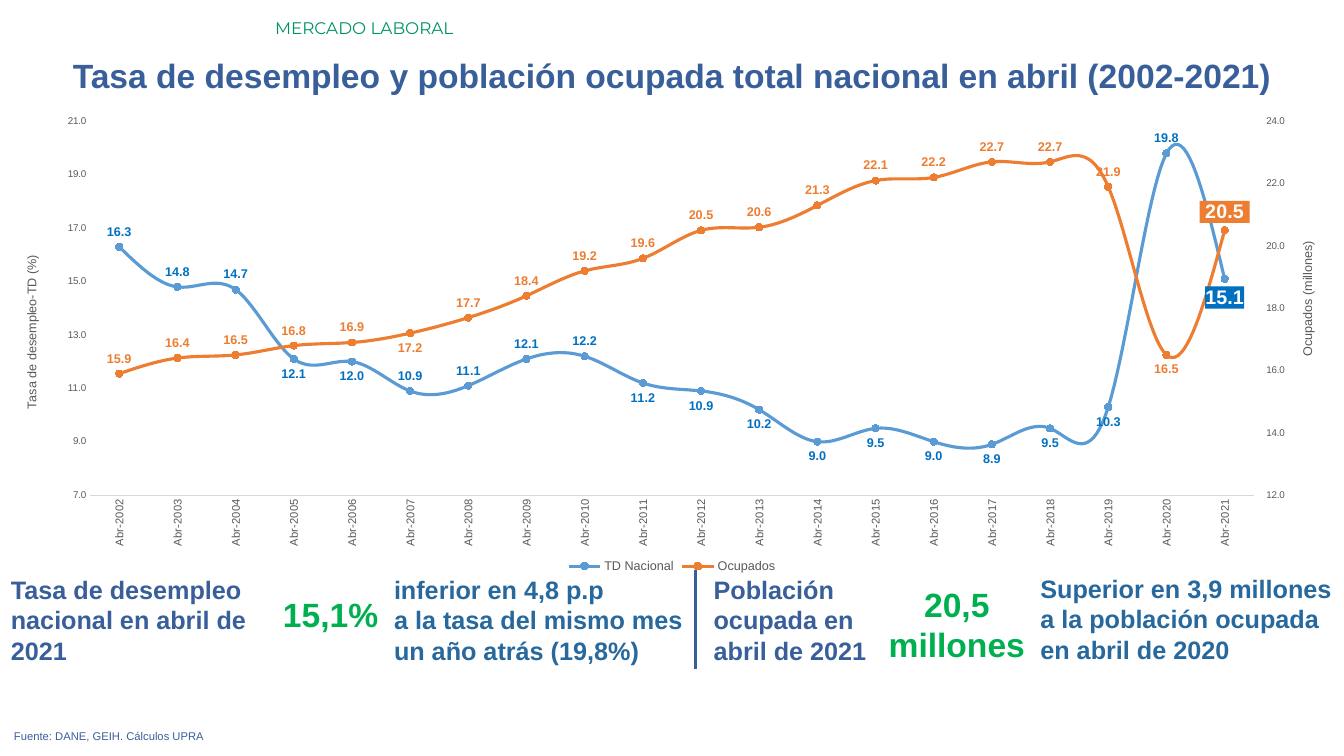
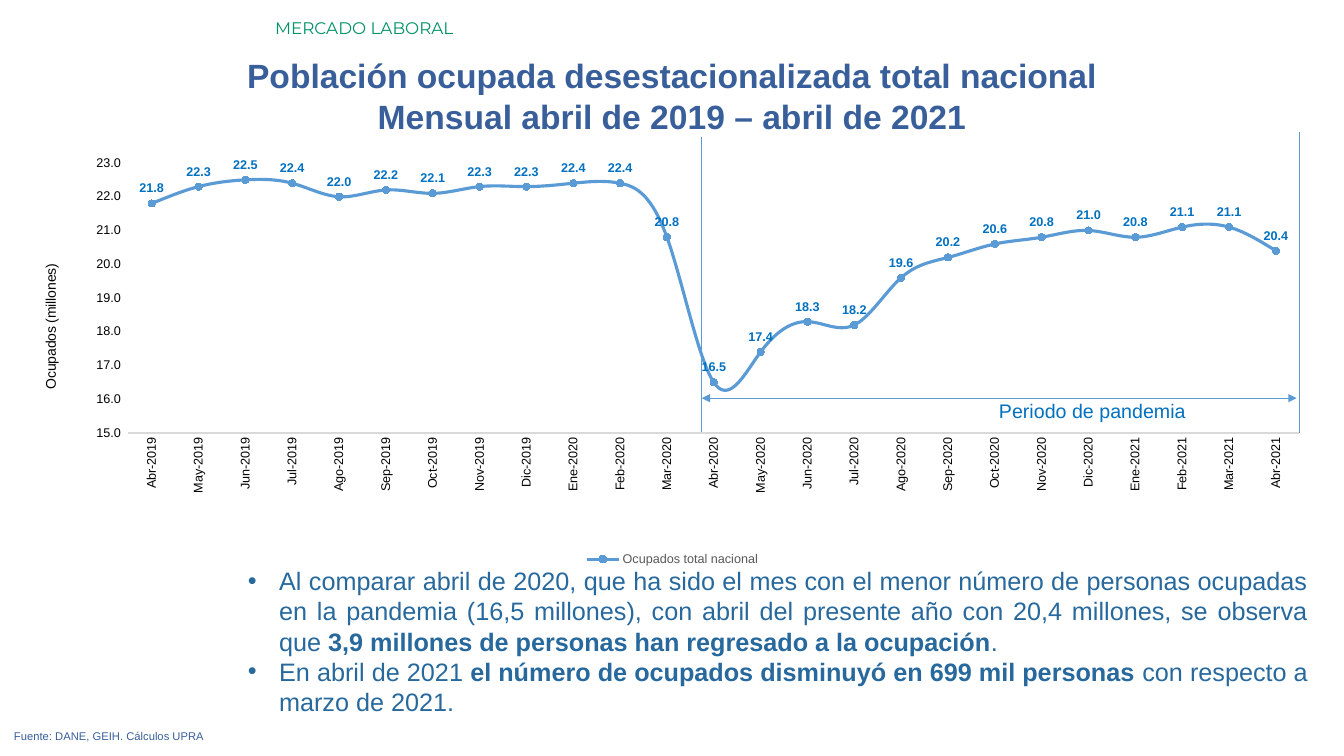
from copy import deepcopy
from dataclasses import dataclass

from lxml import etree
from pptx import Presentation
from pptx.chart.axis import ValueAxis
from pptx.chart.data import CategoryChartData
from pptx.dml.color import RGBColor
from pptx.enum.chart import (XL_CHART_TYPE, XL_LABEL_POSITION, XL_LEGEND_POSITION,
                             XL_MARKER_STYLE, XL_TICK_MARK)
from pptx.enum.shapes import MSO_CONNECTOR
from pptx.enum.text import PP_ALIGN
from pptx.oxml.ns import qn
from pptx.util import Inches, Pt

LEFT, CENTER, RIGHT, JUSTIFY = PP_ALIGN.LEFT, PP_ALIGN.CENTER, PP_ALIGN.RIGHT, PP_ALIGN.JUSTIFY
ABOVE, BELOW = XL_LABEL_POSITION.ABOVE, XL_LABEL_POSITION.BELOW
NO_TICK, OUTER_TICK = XL_TICK_MARK.NONE, XL_TICK_MARK.OUTSIDE
LINE_MARKERS, CIRCLE = XL_CHART_TYPE.LINE_MARKERS, XL_MARKER_STYLE.CIRCLE
LEGEND_BOTTOM = XL_LEGEND_POSITION.BOTTOM
STRAIGHT = MSO_CONNECTOR.STRAIGHT

ACCOUNTING = '_-* #,##0.0_-;\\-* #,##0.0_-;_-* "-"??_-;'
VERTICAL = "-5400000"


@dataclass(frozen=True)
class Theme:
    font: str = "Arial"
    section_font: str = "Montserrat"
    section: str = "009267"
    navy: str = "395F9B"
    steel: str = "27689D"
    green: str = "00B050"
    blue: str = "5B9BD5"
    orange: str = "ED7D31"
    label_blue: str = "0070C0"
    gray: str = "595959"
    axis_line: str = "D9D9D9"
    black: str = "000000"
    white: str = "FFFFFF"
    title_size: float = 24
    body_size: float = 18
    callout_size: float = 14
    section_size: float = 12
    chart_size: float = 10
    label_size: float = 9
    source_size: float = 8
    tick_size: float = 7


THEME = Theme()


# ---- Text and lines ----
def style_font(font, size, color, bold=False, name=THEME.font):
    font.name, font.size, font.bold = name, Pt(size), bold
    font.color.rgb = RGBColor.from_string(color)


def add_text(slide, box, paragraphs, size, color, bold=False, align=LEFT,
             font=THEME.font, bullets=False):
    """Each paragraph is a list of (text, bold) runs or a plain string."""
    frame = slide.shapes.add_textbox(*map(Inches, box)).text_frame
    frame.word_wrap = True
    for index, content in enumerate(paragraphs):
        paragraph = frame.add_paragraph() if index else frame.paragraphs[0]
        paragraph.alignment = align
        if bullets:
            properties = paragraph._p.get_or_add_pPr()
            properties.set("marL", str(Inches(0.31)))
            properties.set("indent", str(-Inches(0.31)))
            etree.SubElement(properties, qn("a:buFont")).set("typeface", THEME.font)
            etree.SubElement(properties, qn("a:buChar")).set("char", "•")
        runs = [(content, bold)] if isinstance(content, str) else content
        for text, run_bold in runs:
            run = paragraph.add_run()
            run.text = text
            style_font(run.font, size, color, run_bold, font)


def add_line(slide, start, end, color, width, arrows=False):
    line = slide.shapes.add_connector(STRAIGHT, *map(Inches, start + end))
    line.line.color.rgb = RGBColor.from_string(color)
    line.line.width = Pt(width)
    properties = line._element.spPr
    if arrows:
        outline = properties.find(qn("a:ln"))
        for tip in ("a:headEnd", "a:tailEnd"):
            etree.SubElement(outline, qn(tip)).set("type", "triangle")
    etree.SubElement(properties, qn("a:effectLst"))


def add_page(deck, title_lines):
    """Blank slide with the shared section name, title and source."""
    slide = deck.slides.add_slide(deck.slide_layouts[6])
    add_text(slide, (2.63, 0.13, 10.7, 0.3), ["MERCADO LABORAL"],
             THEME.section_size, THEME.section, font=THEME.section_font)
    add_text(slide, (0, 0.5, 13.33, 0.1 + 0.4 * len(title_lines)), title_lines,
             THEME.title_size, THEME.navy, True, CENTER)
    add_text(slide, (0.04, 7.19, 12.91, 0.24), ["Fuente: DANE, GEIH. Cálculos UPRA"],
             THEME.source_size, THEME.navy, align=JUSTIFY)
    return slide


# ---- Chart parts ----
def set_layout(element, **fractions):
    """Place a plot area or title by fractions of the chart."""
    for old in element.findall(qn("c:layout")):
        element.remove(old)
    layout = etree.Element(qn("c:layout"))
    manual = etree.SubElement(layout, qn("c:manualLayout"))
    if "w" in fractions:
        etree.SubElement(manual, qn("c:layoutTarget")).set("val", "inner")
    for side in "xy":
        etree.SubElement(manual, qn(f"c:{side}Mode")).set("val", "edge")
    for key, value in fractions.items():
        etree.SubElement(manual, qn(f"c:{key}")).set("val", str(value))
    overlay = element.find(qn("c:overlay"))
    if overlay is not None:
        overlay.addprevious(layout)
    else:
        element.insert(0, layout)


def style_value_axis(axis, title, title_at, limits, step, number_format,
                     size, title_size, color, tick=NO_TICK):
    axis.has_major_gridlines = False
    axis.minimum_scale, axis.maximum_scale = limits
    axis.major_unit = step
    axis.major_tick_mark, axis.minor_tick_mark = tick, NO_TICK
    axis.format.line.fill.background()
    labels = axis.tick_labels
    labels.number_format, labels.number_format_is_linked = number_format, False
    style_font(labels.font, size, color)
    frame = axis.axis_title.text_frame
    frame.text = title
    style_font(frame.paragraphs[0].runs[0].font, title_size, color)
    body = frame._txBody.bodyPr
    body.set("rot", VERTICAL)
    body.set("vert", "horz")
    set_layout(axis.axis_title._element, x=title_at[0], y=title_at[1])


def style_category_axis(axis, size, color):
    axis.has_major_gridlines = False
    axis.major_tick_mark = axis.minor_tick_mark = NO_TICK
    axis.format.line.color.rgb = RGBColor.from_string(THEME.axis_line)
    axis.format.line.width = Pt(0.75)
    style_font(axis.tick_labels.font, size, color)
    axis._element.find(f"{qn('c:txPr')}/{qn('a:bodyPr')}").set("rot", VERTICAL)


def style_series(series, color, label_color, number_format, below=()):
    series.smooth = True
    series.marker.style, series.marker.size = CIRCLE, 5
    series.format.line.width = Pt(2.25)
    for part in (series.format.line, series.marker.format.line):
        part.color.rgb = RGBColor.from_string(color)
    series.marker.format.fill.solid()
    series.marker.format.fill.fore_color.rgb = RGBColor.from_string(color)
    labels = series.data_labels
    labels.show_value, labels.position = True, ABOVE
    labels.number_format, labels.number_format_is_linked = number_format, False
    style_font(labels.font, THEME.label_size, label_color, True)
    for index in below:
        style_point_label(series, index, BELOW, THEME.label_size, label_color, number_format)


def style_point_label(series, index, position, size, color, number_format, fill=None):
    label = series.points[index].data_label
    label.position = position
    style_font(label.font, size, color, True)
    element = series.data_labels._element.xpath(f"c:dLbl[c:idx/@val='{index}']")[0]
    for old in element.findall(qn("c:numFmt")) + element.findall(qn("c:spPr")):
        element.remove(old)
    text = element.find(qn("c:txPr"))
    shown = etree.Element(qn("c:numFmt"), formatCode=number_format, sourceLinked="0")
    text.addprevious(shown)
    if fill:
        box = etree.Element(qn("c:spPr"))
        solid = etree.SubElement(box, qn("a:solidFill"))
        etree.SubElement(solid, qn("a:srgbClr")).set("val", fill)
        text.addprevious(box)


def split_value_axes(chart):
    """Move the second series to its own axis; return the left and right axes."""
    area = chart._chartSpace.chart.plotArea
    left_plot = area.find(qn("c:lineChart"))
    right_plot = deepcopy(left_plot)
    left_plot.remove(left_plot.findall(qn("c:ser"))[1])
    right_plot.remove(right_plot.findall(qn("c:ser"))[0])
    left_plot.addnext(right_plot)
    values, categories = area.find(qn("c:valAx")), area.find(qn("c:catAx"))
    right_values, right_categories = deepcopy(values), deepcopy(categories)
    values.addnext(right_values)
    right_values.addnext(right_categories)
    for part in (right_plot, right_values, right_categories):
        for identifier in part.iter(qn("c:axId"), qn("c:crossAx")):
            identifier.set("val", str(int(identifier.get("val")) + 1))
    right_values.find(qn("c:axPos")).set("val", "r")
    right_values.find(qn("c:crosses")).set("val", "max")
    right_categories.find(qn("c:delete")).set("val", "1")
    return ValueAxis(values), ValueAxis(right_values)


def add_line_chart(slide, box, plot, categories, series):
    data = CategoryChartData(number_format="0.0")
    data.categories = categories
    for name, values in series.items():
        data.add_series(name, values)
    chart = slide.shapes.add_chart(LINE_MARKERS, *map(Inches, box), data).chart
    style_font(chart.font, THEME.chart_size, THEME.gray)
    chart.has_title = False
    chart.has_legend = True
    chart.legend.position, chart.legend.include_in_layout = LEGEND_BOTTOM, False
    style_font(chart.legend.font, THEME.label_size, THEME.gray)
    chart.plots[0].vary_by_categories = False
    set_layout(chart._chartSpace.chart.plotArea, **dict(zip("xywh", plot)))
    background = etree.Element(qn("c:spPr"))
    etree.SubElement(background, qn("a:noFill"))
    etree.SubElement(etree.SubElement(background, qn("a:ln")), qn("a:noFill"))
    chart._chartSpace.chart.addnext(background)
    return chart


# ---- Slides ----
def build_yearly(deck):
    slide = add_page(deck, ["Tasa de desempleo y población ocupada total nacional en abril (2002-2021)"])
    rates = [16.3, 14.8, 14.7, 12.1, 12, 10.9, 11.1, 12.1, 12.2, 11.2,
             10.9, 10.2, 9, 9.5, 9, 8.9, 9.5, 10.3, 19.8, 15.1]
    employed = [15.9, 16.4, 16.5, 16.8, 16.9, 17.2, 17.7, 18.4, 19.2, 19.6,
                20.5, 20.6, 21.3, 22.1, 22.2, 22.7, 22.7, 21.9, 16.5, 20.5]
    chart = add_line_chart(slide, (0.21, 1.06, 12.91, 4.67), (0.053, 0.031, 0.894, 0.794),
                           [f"Abr-{year}" for year in range(2002, 2022)],
                           {"TD Nacional": rates, "Ocupados": employed})
    rate_axis, employed_axis = split_value_axes(chart)
    style_category_axis(chart.category_axis, THEME.source_size, THEME.gray)
    style_value_axis(rate_axis, "Tasa de desempleo-TD (%)", (0, 0.31), (7, 21), 2,
                     "0.0", THEME.tick_size, THEME.label_size, THEME.gray)
    style_value_axis(employed_axis, "Ocupados (millones)", (0.98, 0.28), (12, 24), 2,
                     ACCOUNTING, THEME.tick_size, THEME.label_size, THEME.gray, OUTER_TICK)
    rate_line, employed_line = (plot.series[0] for plot in chart.plots)
    style_series(rate_line, THEME.blue, THEME.label_blue, "#,##0.0", [3, 4, *range(9, 18)])
    style_series(employed_line, THEME.orange, THEME.orange, ACCOUNTING, [5, 18])
    style_point_label(rate_line, 19, BELOW, THEME.callout_size, THEME.white,
                      "#,##0.0", THEME.label_blue)
    style_point_label(employed_line, 19, ABOVE, THEME.callout_size, THEME.white,
                      ACCOUNTING, THEME.orange)

    # Key figures below the chart
    body, figure = THEME.body_size, THEME.title_size
    for box, lines, size, color, align in (
        ((0.01, 5.65, 2.84, 1.01), ["Tasa de desempleo nacional en abril de 2021"], body, THEME.navy, LEFT),
        ((2.63, 5.84, 1.22, 0.5), ["15,1%"], figure, THEME.green, RIGHT),
        ((3.81, 5.65, 3.07, 1.01), ["inferior en 4,8 p.p", "a la tasa del mismo mes un año atrás (19,8%)"],
         body, THEME.steel, LEFT),
        ((6.98, 5.65, 1.83, 1.01), ["Población ocupada en abril de 2021"], body, THEME.navy, LEFT),
        ((8.69, 5.74, 1.6, 0.91), ["20,5 millones"], figure, THEME.green, CENTER),
        ((10.22, 5.64, 3.22, 1.01), ["Superior en 3,9 millones a la población ocupada en abril de 2020"],
         body, THEME.steel, LEFT),
    ):
        add_text(slide, box, lines, size, color, True, align)
    add_line(slide, (6.9, 5.65), (6.9, 6.64), THEME.navy, 2.25)


def build_monthly(deck):
    slide = add_page(deck, ["Población ocupada desestacionalizada total nacional",
                            "Mensual abril de 2019 – abril de 2021"])
    names = "Ene Feb Mar Abr May Jun Jul Ago Sep Oct Nov Dic".split()
    months = [f"{names[count % 12]}-{2019 + count // 12}" for count in range(3, 28)]
    employed = [21.8, 22.3, 22.5, 22.4, 22, 22.2, 22.1, 22.3, 22.3, 22.4, 22.4, 20.8, 16.5,
                17.4, 18.3, 18.2, 19.6, 20.2, 20.6, 20.8, 21, 20.8, 21.1, 21.1, 20.4]
    chart = add_line_chart(slide, (0.26, 1.4, 12.82, 4.26), (0.079, 0.051, 0.906, 0.629),
                           months, {"Ocupados total nacional": employed})
    style_category_axis(chart.category_axis, THEME.label_size, THEME.black)
    style_value_axis(chart.value_axis, "Ocupados (millones)", (0.01, 0.28), (15, 23), 1,
                     ACCOUNTING, THEME.label_size, THEME.chart_size, THEME.black)
    style_series(chart.plots[0].series[0], THEME.blue, THEME.label_blue, ACCOUNTING)

    # Pandemic period
    add_line(slide, (6.96, 1.36), (6.96, 4.29), THEME.blue, 0.5)
    add_line(slide, (12.89, 1.31), (12.89, 4.3), THEME.blue, 0.5)
    add_line(slide, (6.96, 3.95), (12.86, 3.95), THEME.blue, 0.5, arrows=True)
    add_text(slide, (9.81, 3.91, 2.63, 0.34), ["Periodo de pandemia"],
             THEME.callout_size, THEME.label_blue)

    # Findings
    add_text(slide, (2.36, 5.56, 10.71, 1.62), [
        [("Al comparar abril de 2020, que ha sido el mes con el menor número de personas ocupadas "
          "en la pandemia (16,5 millones), con abril del presente año con 20,4 millones, "
          "se observa que ", False),
         ("3,9 millones de personas han regresado a la ocupación", True), (".", False)],
        [("En abril de 2021 ", False),
         ("el número de ocupados disminuyó en 699 mil personas ", True),
         ("con respecto a marzo de 2021.", False)],
    ], THEME.body_size, THEME.steel, align=JUSTIFY, bullets=True)


def main():
    deck = Presentation()
    deck.slide_width, deck.slide_height = Inches(13.33), Inches(7.5)
    build_yearly(deck)
    build_monthly(deck)
    deck.save("out.pptx")


if __name__ == "__main__":
    main()
